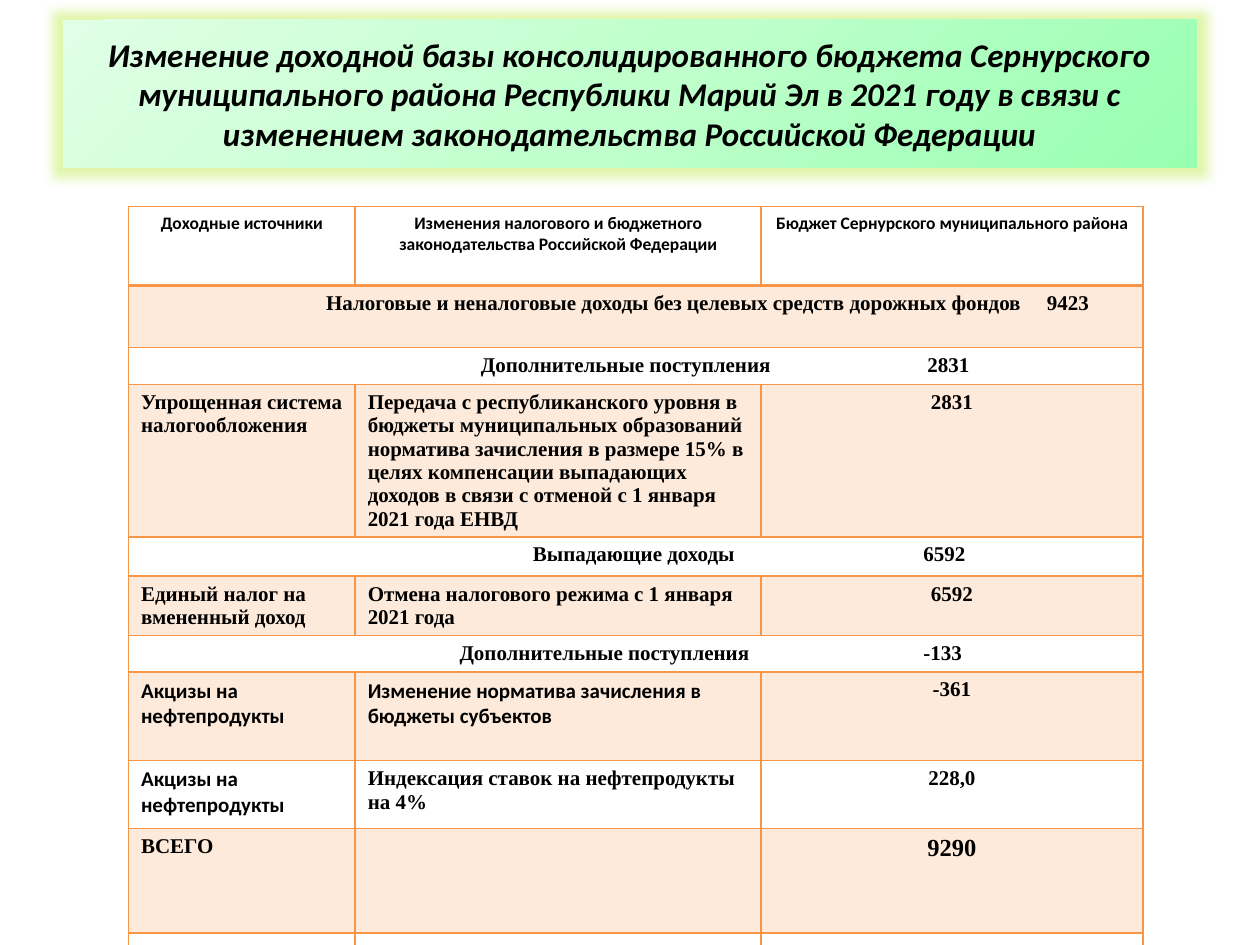
from lxml import etree
from pptx import Presentation
from pptx import util as u
from pptx.dml.color import RGBColor
from pptx.enum import text
from pptx.oxml.ns import nsdecls, qn

TITLE = ("Изменение доходной базы консолидированного бюджета Сернурского "
         "муниципального района Республики Марий Эл в 2021 году в связи с "
         "изменением законодательства Российской Федерации")
COLS = [4.57, 8.18, 7.7]
ROWS = [
    (1.6, ["Доходные источники",
           "Изменения налогового и бюджетного законодательства Российской Федерации",
           "Бюджет Сернурского муниципального района"]),
    (1.25, ["Налоговые и неналоговые доходы без целевых средств дорожных фондов", "9423"]),
    (0.74, ["Дополнительные поступления", "2831"]),
    (3.07, ["Упрощенная система налогообложения",
            "Передача с республиканского уровня в бюджеты муниципальных образований "
            "норматива зачисления в размере 15% в целях компенсации выпадающих доходов "
            "в связи с отменой с 1 января 2021 года ЕНВД", "2831"]),
    (0.79, ["Выпадающие доходы", "6592"]),
    (1.2, ["Единый налог на вмененный доход",
           "Отмена налогового режима с 1 января 2021 года", "6592"]),
    (0.73, ["Дополнительные поступления", "-133"]),
    (1.79, ["Акцизы на нефтепродукты",
            "Изменение норматива зачисления в бюджеты субъектов", "-361"]),
    (1.37, ["Акцизы на нефтепродукты", "Индексация ставок на нефтепродукты на 4%", "228,0"]),
    (2.1, ["ВСЕГО", "", "9290"]),
    (2.1, ["", "", ""]),
]
TABS = {1: (3.73, 18.26), 2: (6.85, 15.85), 4: (7.9, 15.77), 6: (6.42, 15.77)}
CALIBRI_CELLS = {(0, 0), (0, 1), (0, 2), (7, 0), (7, 1), (8, 0)}
ORANGE, PEACH, BLACK = "F79646", "FDEADA", "000000"
STOPS = [(0, "98FFB0"), (50, "C0FFCD"), (100, "E0FFE6")]
GLOW = "B6E830"


def rgb(value):
    return RGBColor.from_string(value)


def add_xml(parent, xml):
    tag, rest = xml.split(" ", 1)
    parent.append(etree.fromstring(f"{tag} {nsdecls('a')} {rest}"))


def write(p, words, align, **fmt):
    p.alignment = align
    r = p.add_run()
    r.text = words
    r.font.color.rgb = rgb(BLACK)
    for name, value in {"bold": True, **fmt}.items():
        setattr(r.font, name, value)


def set_tabs(p, stops):
    tabs = "".join(f'<a:tab pos="{u.Cm(x)}" algn="l"/>' for x in stops)
    add_xml(p._p.get_or_add_pPr(), f"<a:tabLst >{tabs}</a:tabLst>")


def set_borders(cell, bottom):
    tcPr = cell._tc.get_or_add_tcPr()
    for i, (side, width) in enumerate({"L": 1, "R": 1, "T": 1, "B": bottom}.items()):
        ln = etree.Element(qn(f"a:ln{side}"), w=str(u.Pt(width)))
        add_xml(ln, f'<a:solidFill ><a:srgbClr val="{ORANGE}"/></a:solidFill>')
        tcPr.insert(i, ln)


def add_title(s):
    sp = s.shapes.title
    sp.left, sp.top, sp.width, sp.height = map(u.Cm, (1.27, 0.4, 22.86, 2.97))
    stops = "".join(f'<a:gs pos="{pos * 1000}"><a:srgbClr val="{c}"/></a:gs>'
                    for pos, c in STOPS)
    spPr = sp._element.spPr
    add_xml(spPr, '<a:prstGeom prst="rect"><a:avLst/></a:prstGeom>')
    add_xml(spPr, f'<a:gradFill rotWithShape="1"><a:gsLst>{stops}</a:gsLst><a:path path="circle">'
                  '<a:fillToRect l="100000" t="100000"/></a:path></a:gradFill>')
    add_xml(spPr, f'<a:effectLst ><a:glow rad="{u.Pt(11)}"><a:srgbClr val="{GLOW}">'
                  '<a:alpha val="40000"/></a:srgbClr></a:glow></a:effectLst>')
    tf = sp.text_frame
    for name, value in {"word_wrap": True, "auto_size": text.MSO_AUTO_SIZE.NONE,
                        "vertical_anchor": text.MSO_ANCHOR.MIDDLE}.items():
        setattr(tf, name, value)
    write(tf.paragraphs[0], TITLE, text.PP_ALIGN.CENTER,
          name="Calibri", size=u.Pt(18.9), italic=True)


def add_budget_table(s):
    tbl = s.shapes.add_table(len(ROWS), len(COLS), u.Cm(2.59), u.Cm(4.16), u.Cm(sum(COLS)),
                             u.Cm(sum(h for h, _ in ROWS))).table
    tbl.first_row = tbl.horz_banding = False
    for col, width in zip(tbl.columns, COLS):
        col.width = u.Cm(width)
    for i, (height, words) in enumerate(ROWS):
        tbl.rows[i].height = u.Cm(height)
        for j in range(len(COLS)):
            cell = tbl.cell(i, j)
            if i % 2:
                cell.fill.solid()
                cell.fill.fore_color.rgb = rgb(PEACH)
            else:
                cell.fill.background()
            set_borders(cell, 1 if i else 2)
        if i in TABS:
            tbl.cell(i, 0).merge(tbl.cell(i, 2))
            set_tabs(tbl.cell(i, 0).text_frame.paragraphs[0], TABS[i])
            words = ["".join("\t" + w for w in words)]
        for j, value in enumerate(words):
            if value:
                centred = i == 0 or j == 2
                size = 10 if i == 0 else 14 if value == "9290" else 12
                write(tbl.cell(i, j).text_frame.paragraphs[0], value,
                      text.PP_ALIGN.CENTER if centred else text.PP_ALIGN.LEFT,
                      name="Calibri" if (i, j) in CALIBRI_CELLS else "Times New Roman",
                      size=u.Pt(size))


def main():
    """Build the slide on changes to the district budget's revenue base."""
    prs = Presentation()
    prs.slide_width, prs.slide_height = u.Cm(25.4), u.Cm(19.05)
    s = prs.slides.add_slide(prs.slide_layouts[5])
    add_title(s)
    add_budget_table(s)
    prs.save("out.pptx")


if __name__ == "__main__":
    main()
